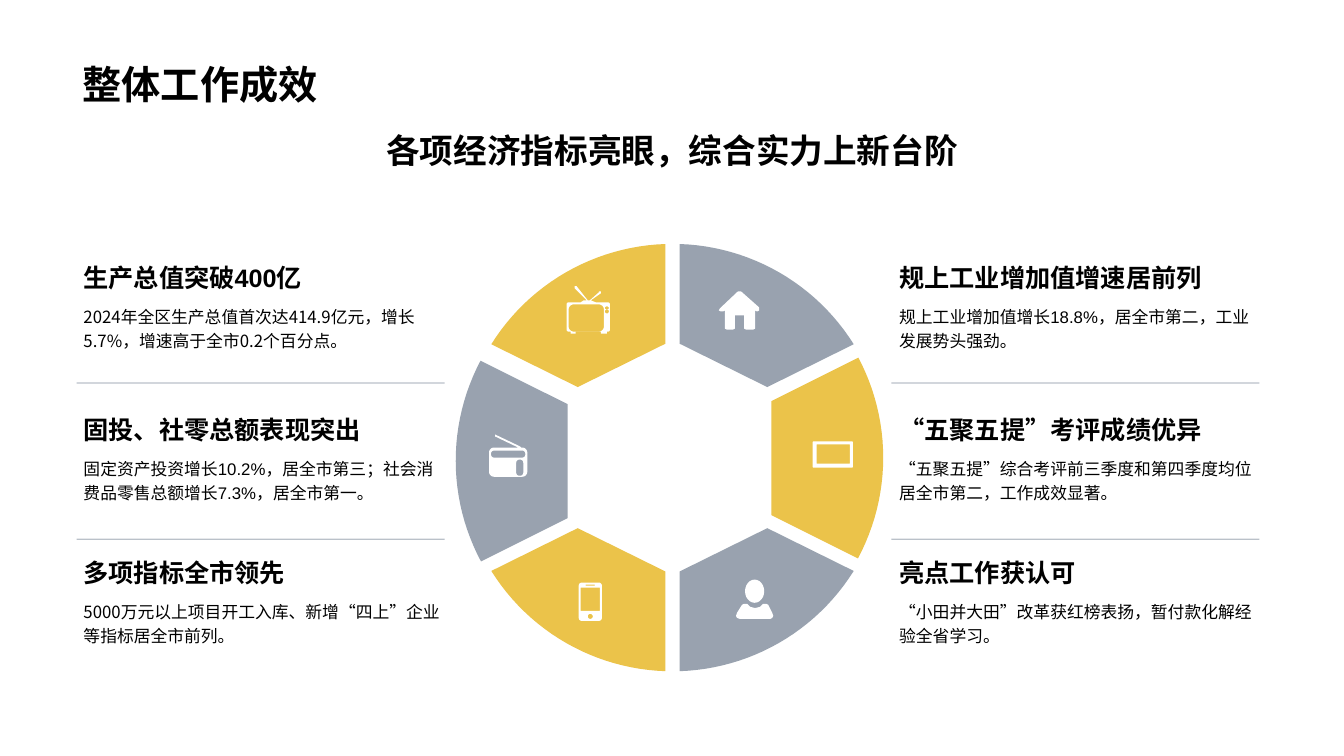
import math

import pptx
import pptx.dml.color
import pptx.enum.shapes
import pptx.enum.text
import pptx.oxml
import pptx.oxml.ns
import pptx.util

PX = 9144  # EMU in one px, 100 px to the inch
COLORS = {"ink": "000000", "gold": "EBC34A", "slate": "778495", "white": "FFFFFF"}
ARIAL, NOTO = "Arial", "Noto Sans CJK SC"
ANCHOR = pptx.enum.text.MSO_ANCHOR
ALIGN = pptx.enum.text.PP_ALIGN

LEFT, RIGHT = 73, 882
ROWS = (251, 402, 544)
TOPICS = [
    (LEFT, 0, "生产总值突破400亿", ARIAL,
     "2024年全区生产总值首次达414.9亿元，增长5.7%，增速高于全市0.2个百分点。", NOTO),
    (RIGHT, 0, "规上工业增加值增速居前列", ARIAL,
     "规上工业增加值增长18.8%，居全市第二，工业发展势头强劲。", ARIAL),
    (LEFT, 1, "固投、社零总额表现突出", ARIAL,
     "固定资产投资增长10.2%，居全市第三；社会消费品零售总额增长7.3%，居全市第一。", ARIAL),
    (RIGHT, 1, "“五聚五提”考评成绩优异", NOTO,
     "“五聚五提”综合考评前三季度和第四季度均位居全市第二，工作成效显著。", NOTO),
    (LEFT, 2, "多项指标全市领先", ARIAL,
     "5000万元以上项目开工入库、新增“四上”企业等指标居全市前列。", NOTO),
    (RIGHT, 2, "亮点工作获认可", ARIAL,
     "“小田并大田”改革获红榜表扬，暂付款化解经验全省学习。", NOTO),
]

RADIUS = 212
# Offsets from the ring centre: arc start, arc end, then the inner corners.
CORNER = [(7, -211), (179, -112), (94, -70), (7, -113)]
SIDE = [(187, -99), (187, 100), (101, 57), (101, -56)]
SEGMENTS = [  # centre, outline, horizontal flip, vertical flip, colour, opacity
    ((667, 454), CORNER, -1, 1, "gold", 100),
    ((667, 454), CORNER, 1, 1, "slate", 75),
    ((664, 457), SIDE, -1, 1, "slate", 75),
    ((664, 454), SIDE, 1, 1, "gold", 100),
    ((667, 454), CORNER, -1, -1, "gold", 100),
    ((667, 454), CORNER, 1, -1, "slate", 75),
]


def rounded(left, top, width, height, radius_x=0, radius_y=None):
    """Points of a rectangle whose corners are elliptical arcs."""
    radius_y = radius_x if radius_y is None else radius_y
    if not radius_x:
        return [(left, top), (left + width, top),
                (left + width, top + height), (left, top + height)]
    points = []
    for quarter, (right, bottom) in enumerate([(1, 1), (0, 1), (0, 0), (1, 0)]):
        x = left + width - radius_x if right else left + radius_x
        y = top + height - radius_y if bottom else top + radius_y
        for step in range(7):
            angle = math.radians(90 * quarter + 15 * step)
            points.append((x + radius_x * math.cos(angle), y + radius_y * math.sin(angle)))
    return points


def ellipse(left, top, width, height):
    return rounded(left, top, width, height, width / 2, height / 2)


ICONS = {
    "television": [
        rounded(562, 300, 43, 29, 2), rounded(564, 302, 35, 27, 5),
        ellipse(600, 304, 4, 3), ellipse(600, 307, 4, 4),
        [(576, 300), (579, 298), (582, 298), (570, 286), (570, 284), (572, 284),
         (583, 298), (585, 298), (594, 290), (594, 289), (596, 289), (596, 291),
         (586, 298), (591, 300)],
        rounded(566, 329, 5, 2), rounded(596, 329, 6, 2),
    ],
    "house": [[
        (732, 289), (735, 289), (753, 305), (753, 308), (751, 309), (749, 308),
        (749, 326), (747, 327), (740, 327), (738, 326), (738, 313), (729, 313),
        (729, 326), (727, 327), (721, 327), (719, 326), (719, 308), (717, 309),
        (715, 309), (713, 308), (714, 306)]],
    "radio": [
        rounded(485, 444, 38, 29, 5), rounded(487, 447, 34, 7, 3),
        rounded(512, 456, 7, 16, 3),
        [(491, 431), (493, 432), (516, 443), (517, 444), (514, 444), (491, 433)],
    ],
    "screen": [rounded(806, 438, 40, 26, 1), rounded(810, 441, 33, 19)],
    "phone": [
        rounded(574, 578, 23, 38, 3), rounded(576, 583, 19, 23),
        rounded(581, 580, 9, 1), ellipse(583, 609, 5, 5),
    ],
    "person": [
        ellipse(739, 575, 19, 23),
        [(734, 614), (731, 613), (730, 611), (731, 608), (736, 600), (738, 599),
         (741, 599), (744, 602), (748, 603), (750, 603), (754, 602), (757, 599),
         (760, 599), (762, 600), (766, 608), (767, 611), (766, 613), (764, 614)],
    ],
}


def rgb(name):
    return pptx.dml.color.RGBColor.from_string(COLORS[name])


def set_opacity(fill_parent, percent):
    color = fill_parent.find(".//" + pptx.oxml.ns.qn("a:srgbClr"))
    alpha = pptx.oxml.parse_xml(
        f'<a:alpha {pptx.oxml.ns.nsdecls("a")} val="{percent * 1000}"/>')
    color.append(alpha)


def format_text(shape, text, size, font, bold=False, anchor=ANCHOR.TOP,
                align=ALIGN.LEFT, spacing=None):
    frame = shape.text_frame
    frame.text = text
    frame.word_wrap = True
    frame.auto_size = pptx.enum.text.MSO_AUTO_SIZE.NONE
    frame.vertical_anchor = anchor
    para = frame.paragraphs[0]
    para.alignment = align
    para.line_spacing = spacing
    span = para.runs[0]
    span.font.size = pptx.util.Pt(size)
    span.font.bold = bold
    span.font.color.rgb = rgb("ink")
    span.font.name = font
    east_asian = pptx.oxml.parse_xml(
        f'<a:ea {pptx.oxml.ns.nsdecls("a")} typeface="{NOTO}"/>')
    span.font._element.find(pptx.oxml.ns.qn("a:latin")).addnext(east_asian)


def add_text(page, left, top, width, height, text, size, font, **style):
    box = page.shapes.add_textbox(left * PX, top * PX, width * PX, height * PX)
    format_text(box, text, size, font, **style)


def add_outline(page, contours, color, opacity=100):
    """Draw closed contours as one shape; inner contours become holes."""
    scaled = [[(x * PX, y * PX) for x, y in contour] for contour in contours]
    builder = page.shapes.build_freeform(*scaled[0][0], scale=1.0)
    for index, contour in enumerate(scaled):
        if index:
            builder.move_to(*contour[0])
        builder.add_line_segments(contour[1:], close=True)
    shape = builder.convert_to_shape()
    shape.shadow.inherit = False
    shape.fill.solid()
    shape.fill.fore_color.rgb = rgb(color)
    shape.line.fill.background()
    if opacity < 100:
        set_opacity(shape._element.spPr, opacity)


def add_segment(page, center, outline, flip_x, flip_y, color, opacity):
    start, end, *inner = outline
    first, last = (math.atan2(y, x) for x, y in (start, end))
    angles = [first + (last - first) * step / 24 for step in range(25)]
    arc = [(RADIUS * math.cos(angle), RADIUS * math.sin(angle)) for angle in angles]
    points = [(center[0] + flip_x * x, center[1] + flip_y * y) for x, y in arc + inner]
    add_outline(page, [points], color, opacity)


def add_divider(page, left, top):
    line = page.shapes.add_connector(
        pptx.enum.shapes.MSO_CONNECTOR.STRAIGHT,
        left * PX, top * PX, (left + 365) * PX, top * PX)
    line.line.color.rgb = rgb("slate")
    line.line.width = pptx.util.Pt(1)
    properties = line._element.spPr
    set_opacity(properties, 50)
    properties.append(pptx.oxml.parse_xml(
        f'<a:effectLst {pptx.oxml.ns.nsdecls("a")}/>'))


def add_topic(page, left, row, heading, heading_font, detail, detail_font):
    top = ROWS[row]
    add_text(page, left, top + 44, 383, 81, detail, 12, detail_font, spacing=1.2)
    add_text(page, left, top, 383, 44, heading, 18, heading_font,
             bold=True, anchor=ANCHOR.BOTTOM)


def main():
    deck = pptx.Presentation()
    deck.slide_width, deck.slide_height = 1333 * PX, 750 * PX
    page = deck.slides.add_slide(deck.slide_layouts[5])
    title = page.shapes.title
    title.left, title.top, title.width, title.height = (
        length * PX for length in (72, 14, 1188, 98))
    format_text(title, "整体工作成效", 28, ARIAL, bold=True, anchor=ANCHOR.BOTTOM)
    add_text(page, 72, 124, 1189, 105, "各项经济指标亮眼，综合实力上新台阶", 24, ARIAL,
             bold=True, align=ALIGN.CENTER)
    for left in (76, 884):
        for top in (380, 535):
            add_divider(page, left, top)
    for segment in SEGMENTS:
        add_segment(page, *segment)
    for contours in ICONS.values():
        add_outline(page, contours, "white")
    for topic in TOPICS:
        add_topic(page, *topic)
    deck.save("out.pptx")


if __name__ == "__main__":
    main()
